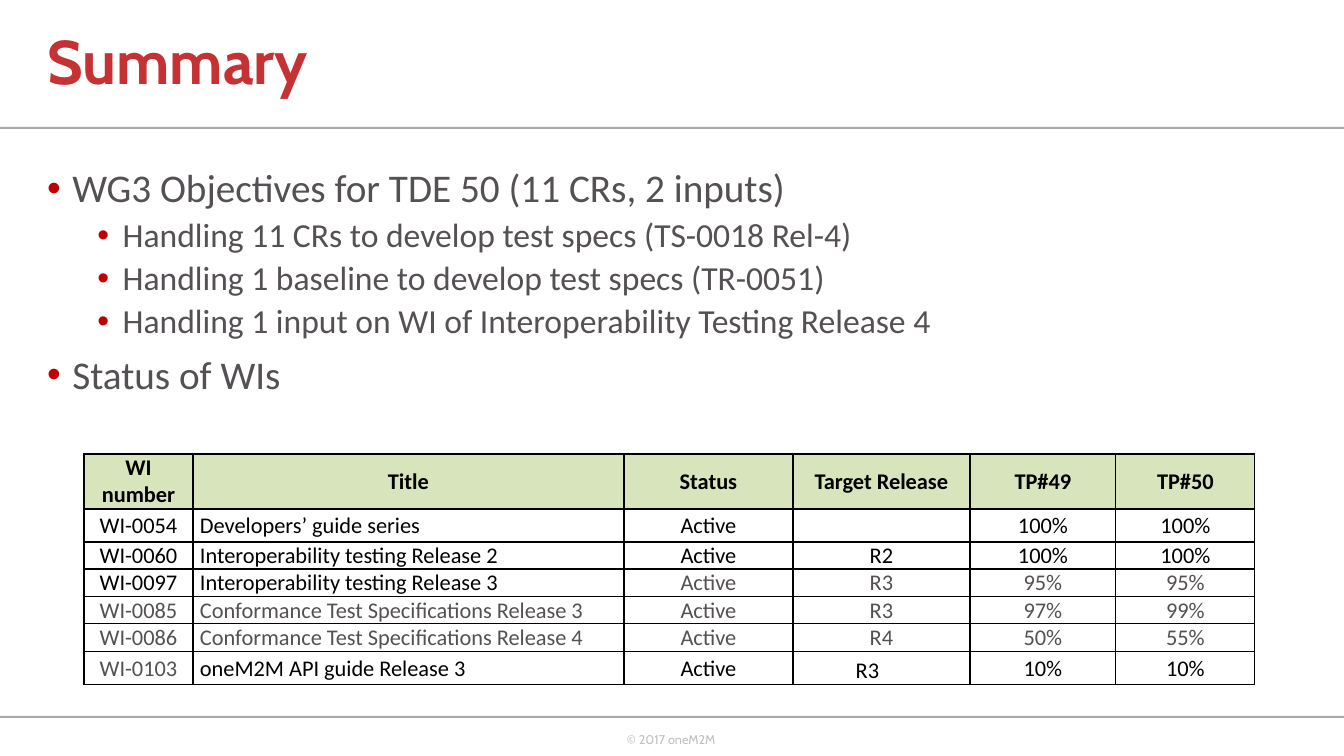
"""Build the working group summary slide with its objectives and work item table."""
import pptx
import pptx.dml.color
import pptx.enum.shapes
import pptx.enum.text
import pptx.oxml.ns
import pptx.util
from lxml import etree

RGBColor = pptx.dml.color.RGBColor
RED = RGBColor(0xC6, 0x31, 0x33)
BULLET_RED = RGBColor(0xC0, 0x00, 0x00)
GREY = RGBColor(0x54, 0x50, 0x54)
RULE_GREY = RGBColor(0xA7, 0xA9, 0xAC)
PALE_GREY = RGBColor(0xBF, 0xBF, 0xBF)
GREEN = RGBColor(0xD8, 0xE4, 0xBC)
WHITE = RGBColor(0xFF, 0xFF, 0xFF)
BLACK = RGBColor(0x00, 0x00, 0x00)

LEFT = pptx.enum.text.PP_ALIGN.LEFT
CENTER = pptx.enum.text.PP_ALIGN.CENTER
MIDDLE = pptx.enum.text.MSO_ANCHOR.MIDDLE
TOP = pptx.enum.text.MSO_ANCHOR.TOP

WIDTH, HEIGHT = 1344, 756
PIXELS_PER_INCH = 100.8

OBJECTIVES = [
    (0, "WG3 Objectives for TDE 50 (11 CRs, 2 inputs)"),
    (1, "Handling 11 CRs to develop test specs (TS-0018 Rel-4)"),
    (1, "Handling 1 baseline to develop test specs (TR-0051)"),
    (1, "Handling 1 input on WI of Interoperability Testing Release 4"),
    (0, "Status of WIs"),
]
WORK_ITEMS = [
    ("WI number", "Title", "Status", "Target Release", "TP#49", "TP#50"),
    ("WI-0054", "Developers’ guide series", "Active", "", "100%", "100%"),
    ("WI-0060", "Interoperability testing Release 2", "Active", "R2", "100%", "100%"),
    ("WI-0097", "Interoperability testing Release 3", "Active", "R3", "95%", "95%"),
    ("WI-0085", "Conformance Test Specifications Release 3", "Active", "R3", "97%", "99%"),
    ("WI-0086", "Conformance Test Specifications Release 4", "Active", "R4", "50%", "55%"),
    ("WI-0103", "oneM2M API guide Release 3", "Active", "R3", "10%", "10%"),
]
GREY_COLUMNS = {3: range(2, 6), 4: range(6), 5: range(6), 6: range(1)}
COLUMN_WIDTHS = [109, 431, 169, 177, 146, 139]
ROW_HEIGHTS = [55, 33, 27, 28, 27, 28, 33]


def px(length):
    return pptx.util.Emu(round(length * 914400 / PIXELS_PER_INCH))


def add_element(parent, tag, **attributes):
    return etree.SubElement(parent, pptx.oxml.ns.qn(tag), attributes)


def write(para, text, font="Calibri", size=16, color=BLACK, bold=False,
          align=LEFT, spacing=None, before=0):
    para.alignment = align
    para.space_before = pptx.util.Pt(before)
    if spacing:
        para.line_spacing = spacing
    span = para.add_run()
    span.text = text
    span.font.name = font
    span.font.size = pptx.util.Pt(size)
    span.font.bold = bold
    span.font.color.rgb = color


class Page:
    """Hold the style and the current slide, and add each kind of element."""

    def __init__(self, deck):
        self.slide = deck.slides.add_slide(deck.slide_layouts[1])
        self.heading_font = "Cabin"

    def rule(self, top):
        bar = self.slide.shapes.add_shape(
            pptx.enum.shapes.MSO_SHAPE.RECTANGLE, 0, px(top), px(WIDTH), px(2))
        bar.shadow.inherit = False
        bar.fill.solid()
        bar.fill.fore_color.rgb = RULE_GREY
        bar.line.fill.background()

    def place(self, box, left, top, width, height, anchor):
        box.left, box.top = px(left), px(top)
        box.width, box.height = px(width), px(height)
        frame = box.text_frame
        frame.auto_size = pptx.enum.text.MSO_AUTO_SIZE.NONE
        frame.vertical_anchor = anchor
        return frame

    def title(self, text):
        frame = self.place(self.slide.shapes.title, 37, 0, 866, 129, MIDDLE)
        write(frame.paragraphs[0], text, font=self.heading_font, size=44,
              color=RED, bold=True, spacing=0.9)

    def bullets(self, items):
        frame = self.place(self.slide.placeholders[1], 37, 164, 1159, 480, TOP)
        for index, (level, text) in enumerate(items):
            para = frame.add_paragraph() if index else frame.paragraphs[0]
            para.level = level
            properties = para._p.get_or_add_pPr()
            properties.set("marL", str(pptx.util.Inches(0.25 + 0.5 * level)))
            properties.set("indent", str(-pptx.util.Inches(0.25)))
            color = add_element(properties, "a:buClr")
            add_element(color, "a:srgbClr", val=str(BULLET_RED))
            add_element(properties, "a:buFont", typeface="Arial")
            add_element(properties, "a:buChar", char="•")
            before = (5 if level else 10) if index else 0
            write(para, text, size=28 - 4 * level, color=GREY,
                  spacing=0.9, before=before)

    def footer(self, text):
        box = self.slide.shapes.add_textbox(px(617), px(727), px(111), px(25))
        box.text_frame.word_wrap = False
        write(box.text_frame.paragraphs[0], text, font=self.heading_font,
              size=9, color=PALE_GREY)

    def format_cell(self, cell, fill):
        cell.vertical_anchor = MIDDLE
        cell.margin_left = cell.margin_right = px(7)
        cell.margin_top = cell.margin_bottom = 0
        properties = cell._tc.get_or_add_tcPr()
        for side in ("a:lnL", "a:lnR", "a:lnT", "a:lnB"):
            border = add_element(properties, side, w=str(pptx.util.Pt(1)))
            color = add_element(border, "a:solidFill")
            add_element(color, "a:srgbClr", val=str(BLACK))
        cell.fill.solid()
        cell.fill.fore_color.rgb = fill

    def table(self, rows, left, top):
        table = self.slide.shapes.add_table(
            len(rows), len(COLUMN_WIDTHS), px(left), px(top),
            px(sum(COLUMN_WIDTHS)), px(sum(ROW_HEIGHTS))).table
        table.first_row = table.horz_banding = False
        for column, width in zip(table.columns, COLUMN_WIDTHS):
            column.width = px(width)
        for row, height in zip(table.rows, ROW_HEIGHTS):
            row.height = px(height)
        for i, values in enumerate(rows):
            for j, text in enumerate(values):
                cell = table.cell(i, j)
                header = i == 0
                self.format_cell(cell, GREEN if header else WHITE)
                if text:
                    write(cell.text_frame.paragraphs[0], text, bold=header,
                          color=GREY if j in GREY_COLUMNS.get(i, ()) else BLACK,
                          align=LEFT if j == 1 and not header else CENTER)
        return table


def main():
    deck = pptx.Presentation()
    deck.slide_width, deck.slide_height = px(WIDTH), px(HEIGHT)
    page = Page(deck)
    page.rule(127)
    page.rule(716)
    page.footer("© 2017 oneM2M")
    page.title("Summary")
    page.bullets(OBJECTIVES)
    table = page.table(WORK_ITEMS, 84, 454)
    last_release = table.cell(6, 3)
    last_release.margin_right = px(35)
    last_release.margin_top = px(4)
    deck.save("out.pptx")


if __name__ == "__main__":
    main()
